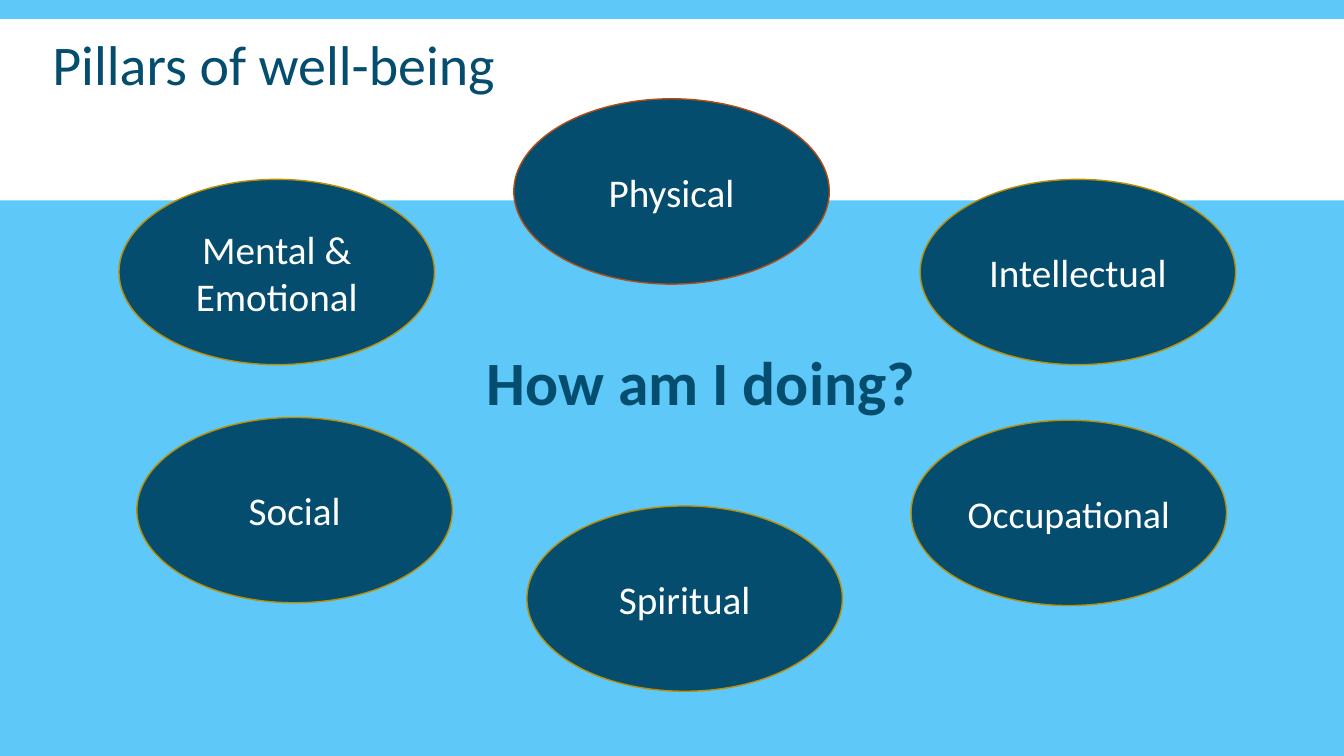
from dataclasses import dataclass

from pptx import Presentation
from pptx.dml.color import RGBColor as RGB
from pptx.enum.shapes import MSO_SHAPE as Geo
from pptx.enum.text import MSO_ANCHOR as Anchor, PP_ALIGN as Align
from pptx.util import Cm, Pt


@dataclass(frozen=True)
class Theme:
    font: str = "Calibri"
    sky: str = "5EC8F8"
    navy: str = "044D6E"
    white: str = "FFFFFF"
    gold: str = "BD8E00"
    rust: str = "B54B11"
    title: int = 40
    query: int = 44
    label: int = 28
    small: int = 27


THEME = Theme()
WIDTH, HEIGHT = 33.87, 19.05
OVAL = (7.95, 4.67)

# Label, left, top, and any format that differs from the default
PILLARS = [
    ("Mental & Emotional", 3, 4.52, {}),
    ("Social", 3.45, 10.52, {}),
    ("Physical", 12.95, 2.49, {"edge": THEME.rust}),
    ("Intellectual", 23.19, 4.52, {}),
    ("Spiritual", 13.28, 12.75, {}),
    ("Occupational", 22.96, 10.59, {"size": THEME.small}),
]


def write(shape, text, *, size, color, bold=False, align=Align.LEFT,
          anchor=Anchor.MIDDLE, leading=None, after=None):
    frame = shape.text_frame
    frame.word_wrap = True
    frame.vertical_anchor = anchor
    para = frame.paragraphs[0]
    para.alignment = align
    if leading is not None:
        para.line_spacing = leading
    if after is not None:
        para.space_after = Pt(after)
    run = para.add_run()
    run.text = text
    font = run.font
    font.name, font.size, font.bold = THEME.font, Pt(size), bold
    font.color.rgb = RGB.from_string(color)


def add_shape(slide, geo, box, fill, edge=None):
    shape = slide.shapes.add_shape(geo, *map(Cm, box))
    shape.shadow.inherit = False
    shape.fill.solid()
    shape.fill.fore_color.rgb = RGB.from_string(fill)
    if edge:
        shape.line.color.rgb = RGB.from_string(edge)
        shape.line.width = Pt(1)
    else:
        shape.line.fill.background()
    return shape


def add_text(slide, box, text, **style):
    write(slide.shapes.add_textbox(*map(Cm, box)), text, **style)


def add_pillar(slide, label, left, top, edge=THEME.gold, size=THEME.label):
    oval = add_shape(slide, Geo.OVAL, (left, top, *OVAL), THEME.navy, edge)
    write(oval, label, size=size, color=THEME.white, align=Align.CENTER)


def main():
    deck = Presentation()
    deck.slide_width, deck.slide_height = Cm(WIDTH), Cm(HEIGHT)
    slide = deck.slides.add_slide(deck.slide_layouts[6])
    back = slide.background.fill
    back.solid()
    back.fore_color.rgb = RGB.from_string(THEME.sky)

    add_shape(slide, Geo.RECTANGLE, (0, 0.48, WIDTH, 4.57), THEME.white)
    for label, left, top, style in PILLARS:
        add_pillar(slide, label, left, top, **style)
    add_text(slide, (10.9, 8.53, 13.54, 2.13), "How am I doing?",
             size=THEME.query, color=THEME.navy, bold=True,
             align=Align.CENTER, anchor=Anchor.TOP)
    add_text(slide, (1.07, 0.81, 32.36, 1.8), "Pillars of well-being",
             size=THEME.title, color=THEME.navy, leading=0.9, after=6)
    deck.save("out.pptx")


if __name__ == "__main__":
    main()
